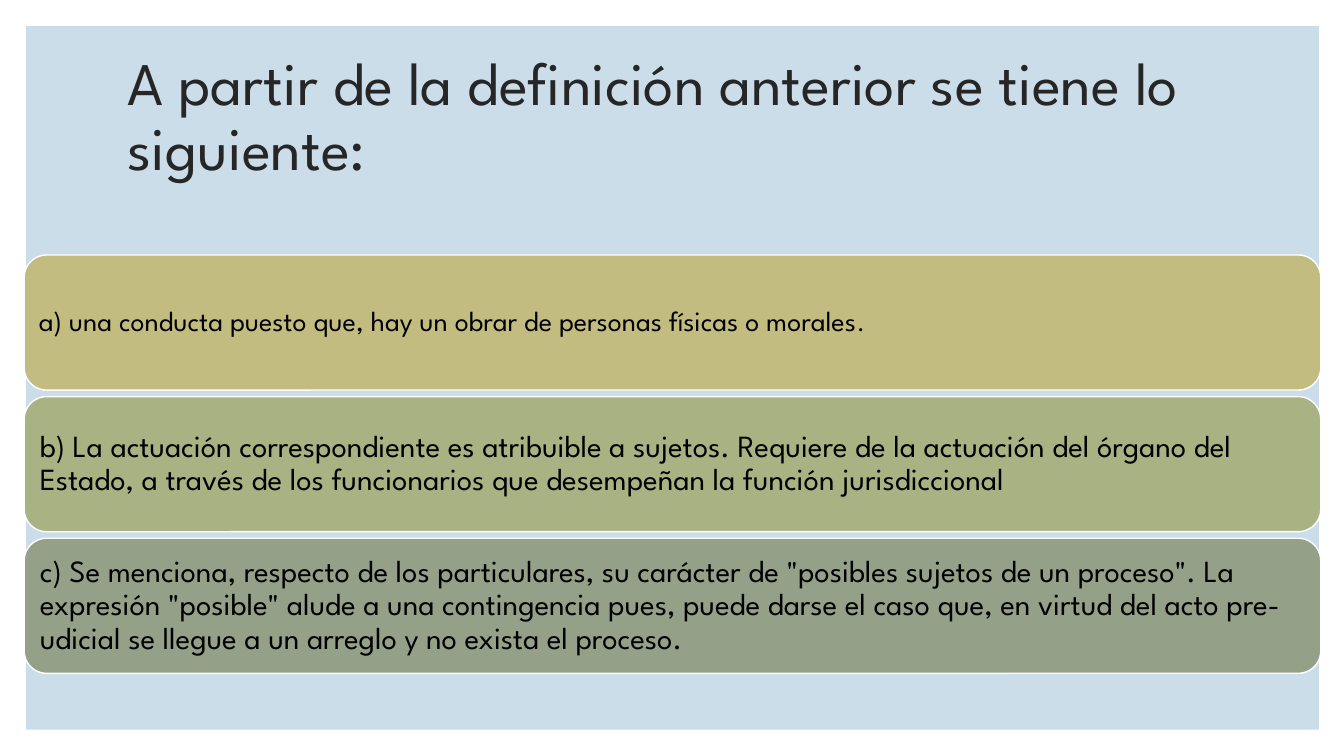
from dataclasses import dataclass

from pptx import Presentation
from pptx.dml.color import RGBColor
from pptx.enum.shapes import MSO_SHAPE
from pptx.enum.text import MSO_ANCHOR, PP_ALIGN
from pptx.util import Inches, Pt

RECTANGLE = MSO_SHAPE.RECTANGLE
ROUNDED = MSO_SHAPE.ROUNDED_RECTANGLE
MIDDLE = MSO_ANCHOR.MIDDLE
LEFT = PP_ALIGN.LEFT


@dataclass(frozen=True)
class Theme:
    font: str = "League Spartan"
    panel: str = "CCDDEA"
    title: str = "262626"
    text: str = "000000"
    outline: str = "FFFFFF"
    bands: tuple = ("C2BC80", "A8B283", "94A088")
    title_size: float = 43.2
    small_size: float = 18
    first_size: float = 20
    body_size: float = 22


theme = Theme()


def write(shape, runs, color=theme.text, side=0.1, top=0.05):
    """Fill a shape with one left-aligned paragraph of (text, size) runs."""
    frame = shape.text_frame
    frame.word_wrap = True
    frame.vertical_anchor = MIDDLE
    frame.margin_left = frame.margin_right = Inches(side)
    frame.margin_top = frame.margin_bottom = Inches(top)
    paragraph = frame.paragraphs[0]
    paragraph.alignment = LEFT
    paragraph.line_spacing = 0.9
    for text, size in runs:
        run = paragraph.add_run()
        run.text = text
        run.font.name = theme.font
        run.font.size = Pt(size)
        run.font.color.rgb = RGBColor.from_string(color)


def add_block(kind, left, top, width, height, fill):
    shape = slide.shapes.add_shape(
        kind, Inches(left), Inches(top), Inches(width), Inches(height))
    shape.shadow.inherit = False
    shape.fill.solid()
    shape.fill.fore_color.rgb = RGBColor.from_string(fill)
    return shape


presentation = Presentation()
presentation.slide_width = Inches(13.33)
presentation.slide_height = Inches(7.5)
slide = presentation.slides.add_slide(presentation.slide_layouts[6])

# Background panel
panel = add_block(RECTANGLE, 0.26, 0.26, 12.82, 6.98, theme.panel)
panel.line.fill.background()

# Title
title = slide.shapes.add_textbox(Inches(1.17), Inches(0.7), Inches(11), Inches(0.95))
write(title, [("A partir de la definición anterior se tiene lo siguiente:",
               theme.title_size)], color=theme.title)

# Three stacked statements
statements = [
    (0.08, [("a) una conducta puesto que, hay un obrar de personas físicas o morales",
             theme.first_size), (".", theme.small_size)]),
    (0.09, [("b) La actuación correspondiente es atribuible a sujetos. Requiere de la "
             "actuación del órgano del Estado, a través de los funcionarios que "
             "desempeñan la función jurisdiccional", theme.body_size)]),
    (0.09, [('c) Se menciona, respecto de los particulares, su carácter de "posibles '
             'sujetos de un proceso". La expresión "posible" alude a una contingencia '
             "pues, puede darse el caso que, en virtud del acto pre-udicial se llegue "
             "a un arreglo y no exista el proceso.", theme.body_size)]),
]
band_top, band_pitch = 2.53, 1.405
for index, (inset, runs) in enumerate(statements):
    band = add_block(ROUNDED, 0.24, band_top + index * band_pitch, 12.86, 1.34,
                     theme.bands[index])
    band.line.color.rgb = RGBColor.from_string(theme.outline)
    band.line.width = Pt(1)
    write(band, runs, side=inset, top=inset)

presentation.save("out.pptx")
